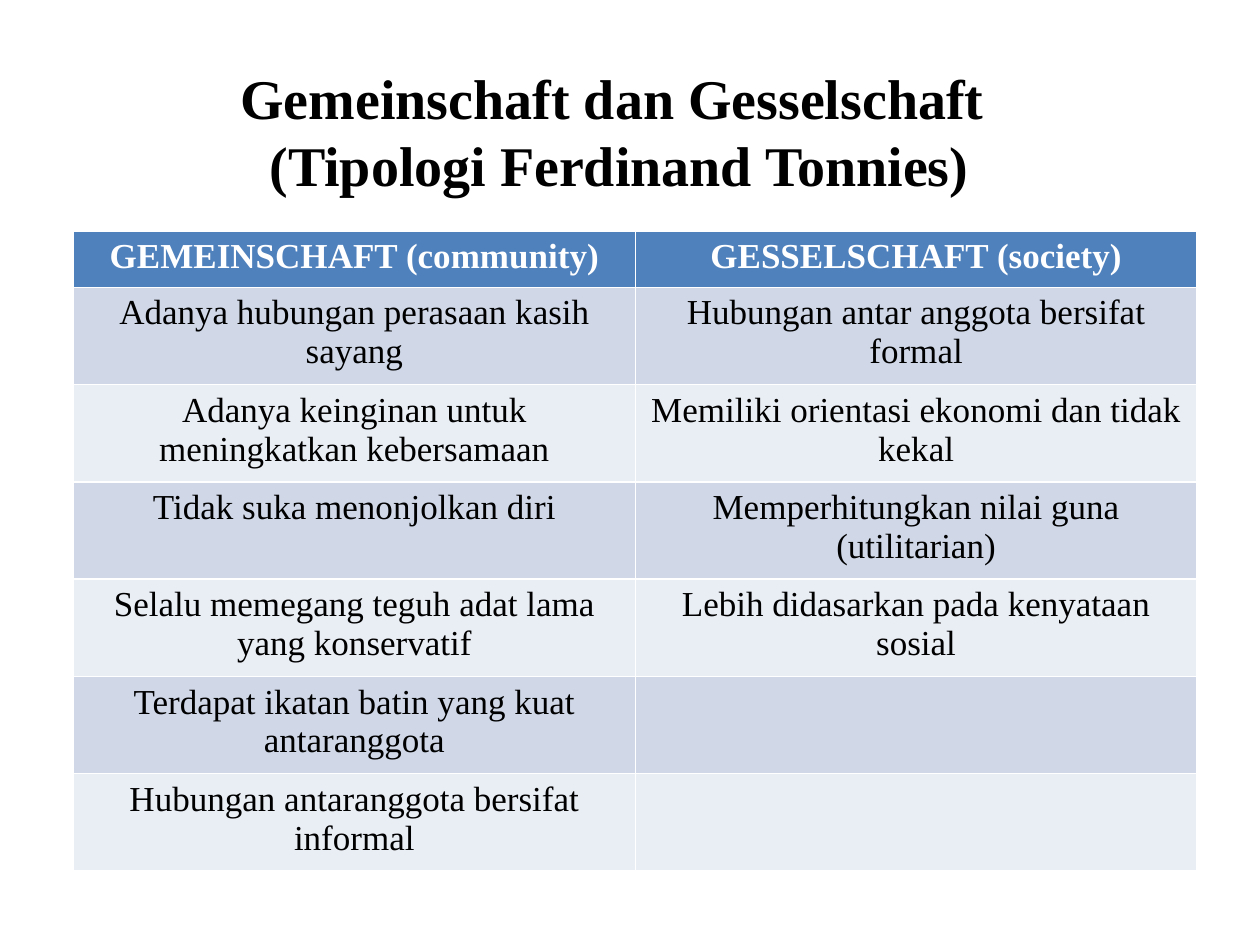
"""Build a slide comparing Gemeinschaft and Gesselschaft in a two-column table."""
from dataclasses import dataclass

from pptx import Presentation
from pptx.dml.color import RGBColor
from pptx.enum.text import MSO_ANCHOR, MSO_AUTO_SIZE, PP_ALIGN
from pptx.util import Pt


@dataclass(frozen=True)
class Theme:
    font: str = "Times New Roman"
    title_size: int = 32
    table_size: int = 20
    ink: str = "000000"
    header_ink: str = "FFFFFF"
    header_fill: str = "4F81BD"
    band_fills: tuple = ("E9EDF4", "D0D8E8")


theme = Theme()


def format_paragraph(para, size, color, bold):
    para.alignment = PP_ALIGN.CENTER
    para.font.name = theme.font
    para.font.size = Pt(size)
    para.font.bold = bold
    para.font.color.rgb = RGBColor.from_string(color)


rows = [
    ("GEMEINSCHAFT (community)", "GESSELSCHAFT (society)"),
    ("Adanya hubungan perasaan kasih sayang", "Hubungan antar anggota bersifat formal"),
    ("Adanya keinginan untuk meningkatkan kebersamaan", "Memiliki orientasi ekonomi dan tidak kekal"),
    ("Tidak suka menonjolkan diri", "Memperhitungkan nilai guna (utilitarian)"),
    ("Selalu memegang teguh adat lama yang konservatif", "Lebih didasarkan pada kenyataan sosial"),
    ("Terdapat ikatan batin yang kuat antaranggota", ""),
    ("Hubungan antaranggota bersifat informal", ""),
]

deck = Presentation()
deck.slide_width, deck.slide_height = Pt(720), Pt(540)
slide = deck.slides.add_slide(deck.slide_layouts[0])
subtitle = slide.placeholders[1].element
subtitle.getparent().remove(subtitle)

title = slide.shapes.title
title.left, title.top, title.width, title.height = Pt(48), Pt(36), Pt(612), Pt(116)
frame = title.text_frame
frame.text = "Gemeinschaft dan Gesselschaft \v(Tipologi Ferdinand Tonnies)"
frame.auto_size = MSO_AUTO_SIZE.NONE
frame.vertical_anchor = MSO_ANCHOR.MIDDLE
frame.margin_bottom = Pt(42)
format_paragraph(frame.paragraphs[0], theme.title_size, theme.ink, True)

header_height, row_height = 32.2, 55.6
table_height = header_height + row_height * (len(rows) - 1)
table = slide.shapes.add_table(
    len(rows), 2, Pt(42), Pt(132), Pt(642), Pt(table_height)
).table

for row_index, texts in enumerate(rows):
    is_header = row_index == 0
    table.rows[row_index].height = Pt(header_height if is_header else row_height)
    fill = theme.header_fill if is_header else theme.band_fills[row_index % 2]
    ink = theme.header_ink if is_header else theme.ink
    for column_index, text in enumerate(texts):
        cell = table.cell(row_index, column_index)
        cell.text = text
        cell.fill.solid()
        cell.fill.fore_color.rgb = RGBColor.from_string(fill)
        format_paragraph(cell.text_frame.paragraphs[0], theme.table_size, ink, is_header)

deck.save("out.pptx")
